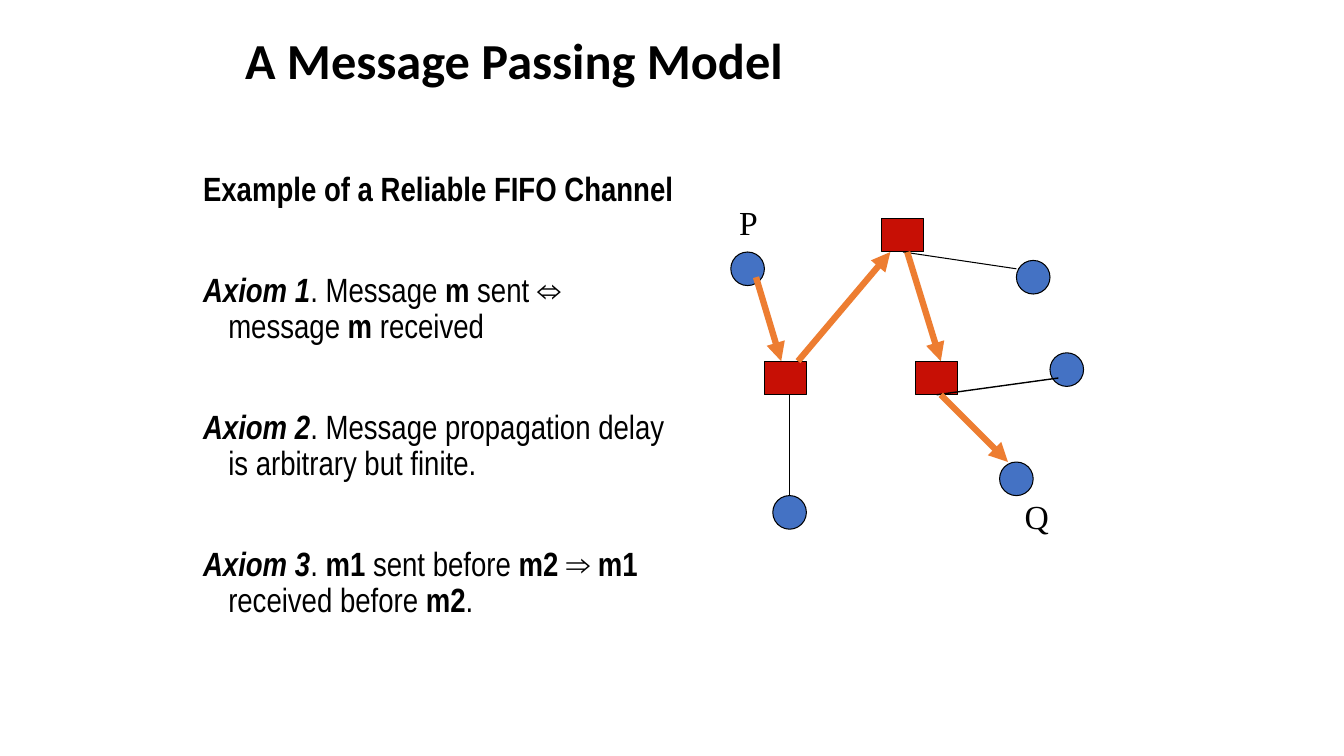
from typing import NamedTuple, Optional

from lxml import etree
from pptx import Presentation
from pptx.dml.color import RGBColor
from pptx.enum.shapes import MSO_CONNECTOR, MSO_SHAPE
from pptx.enum.text import MSO_ANCHOR
from pptx.oxml.ns import qn
from pptx.util import Inches, Pt

LINE = MSO_CONNECTOR.STRAIGHT
OVAL, RECT = MSO_SHAPE.OVAL, MSO_SHAPE.RECTANGLE
TOP, MIDDLE = MSO_ANCHOR.TOP, MSO_ANCHOR.MIDDLE
CELLS = 12  # grid cells per inch: 160 columns by 90 rows
RIGHT = 2  # connection site
BLACK, BLUE, RED, ORANGE = "000000", "4472C4", "C70F05", "ED7D31"


class Node(NamedTuple):
    col: float
    row: float


class Link(NamedTuple):
    start: Node
    end: Node
    width: float = 0.75
    relay: Optional[int] = None  # relay whose right side the link leaves


class Run(NamedTuple):
    text: str
    bold: bool = False
    italic: bool = False


HOSTS = [Node(87, 30), Node(119, 55), Node(92, 59), Node(121, 31), Node(125, 42)]
RELAYS = [Node(91, 43), Node(109, 43), Node(105, 26)]
WIRES = [
    Link(Node(94, 47), Node(94, 59)),
    Link(Node(114, 45), Node(126, 45), 1, 1),
    Link(Node(110, 28), Node(121, 32), relay=2),
]
HOPS = [
    Link(Node(90, 33), Node(93, 43), 4.5),
    Link(Node(95, 43), Node(106, 30), 4.5),
    Link(Node(108, 30), Node(112, 43), 4.5),
    Link(Node(112, 47), Node(120, 55), 4.5),
]
AXIOMS = [
    [Run("Example of a Reliable FIFO Channel", True)],
    [Run("Axiom 1", True, True), Run(". Message "), Run("m", True),
     Run(" sent ⇔ message "), Run("m", True), Run(" received")],
    [Run("Axiom 2", True, True),
     Run(". Message propagation delay is arbitrary but finite.")],
    [Run("Axiom 3", True, True), Run(". "), Run("m1", True),
     Run(" sent before "), Run("m2 ", True), Run("⇒ "), Run("m1", True),
     Run(" received before "), Run("m2", True), Run(".")],
]


def grid(*cells: float) -> list[int]:
    return [Inches(n / CELLS) for n in cells]


def tint(code: str) -> RGBColor:
    return RGBColor.from_string(code)


def write(slide, box: tuple, paras: list[list[Run]], *, font: str, size: float = 24,
          anchor=TOP, wrap: bool = True, lead: float = 1, gap: float = 0,
          hang: float = 0) -> None:
    """Add a text box; gap parts its paragraphs and hang indents wrapped lines."""
    frame = slide.shapes.add_textbox(*grid(*box)).text_frame
    frame.word_wrap, frame.vertical_anchor = wrap, anchor
    for i, runs in enumerate(paras):
        para = frame.paragraphs[0] if i == 0 else frame.add_paragraph()
        para.line_spacing = lead
        para.space_before = Pt(gap if i else 10 if gap else 0)
        if hang:
            props = para._p.get_or_add_pPr()
            props.set("marL", str(Inches(hang)))
            props.set("indent", str(-Inches(hang)))
        for part in runs:
            run = para.add_run()
            run.text = part.text
            run.font.name, run.font.size = font, Pt(size)
            run.font.bold, run.font.italic = part.bold, part.italic
            run.font.color.rgb = tint(BLACK)


def draw(slide, kind, node: Node, width: float, fill: str):
    shape = slide.shapes.add_shape(kind, *grid(*node, width, 4))
    shape.shadow.inherit = False
    shape.fill.solid()
    shape.fill.fore_color.rgb = tint(fill)
    shape.line.color.rgb = tint(BLACK)
    shape.line.width = Pt(0.75)
    return shape


def join(slide, link: Link, color: str, relays: list, arrow: bool = False) -> None:
    line = slide.shapes.add_connector(LINE, *grid(*link.start, *link.end))
    line.line.color.rgb = tint(color)
    line.line.width = Pt(link.width)
    if link.relay is not None:
        line.begin_connect(relays[link.relay], RIGHT)
    if arrow:
        etree.SubElement(line.line._get_or_add_ln(), qn("a:tailEnd"), type="triangle")
    etree.SubElement(line._element.spPr, qn("a:effectLst"))


def main() -> None:
    deck = Presentation()
    deck.slide_width, deck.slide_height = grid(160, 90)
    slide = deck.slides.add_slide(deck.slide_layouts[6])
    write(slide, (28, 0, 102, 15), [[Run("A Message Passing Model", True)]],
          font="Calibri", size=36, anchor=MIDDLE, lead=0.9)
    write(slide, (23, 20, 59, 61), AXIOMS, font="Arial Narrow",
          lead=0.9, gap=46, hang=0.25)
    for host in HOSTS:
        draw(slide, OVAL, host, 4, BLUE)
    relays = [draw(slide, RECT, relay, 5, RED) for relay in RELAYS]
    for wire in WIRES:
        join(slide, wire, BLACK, relays)
    for hop in HOPS:
        join(slide, hop, ORANGE, relays, arrow=True)
    for name, box in (("P", (86.8, 23.5, 4.7, 6)), ("Q", (120.8, 58.5, 5.3, 6))):
        write(slide, box, [[Run(name)]], font="Times New Roman", wrap=False)
    deck.save("out.pptx")


if __name__ == "__main__":
    main()
